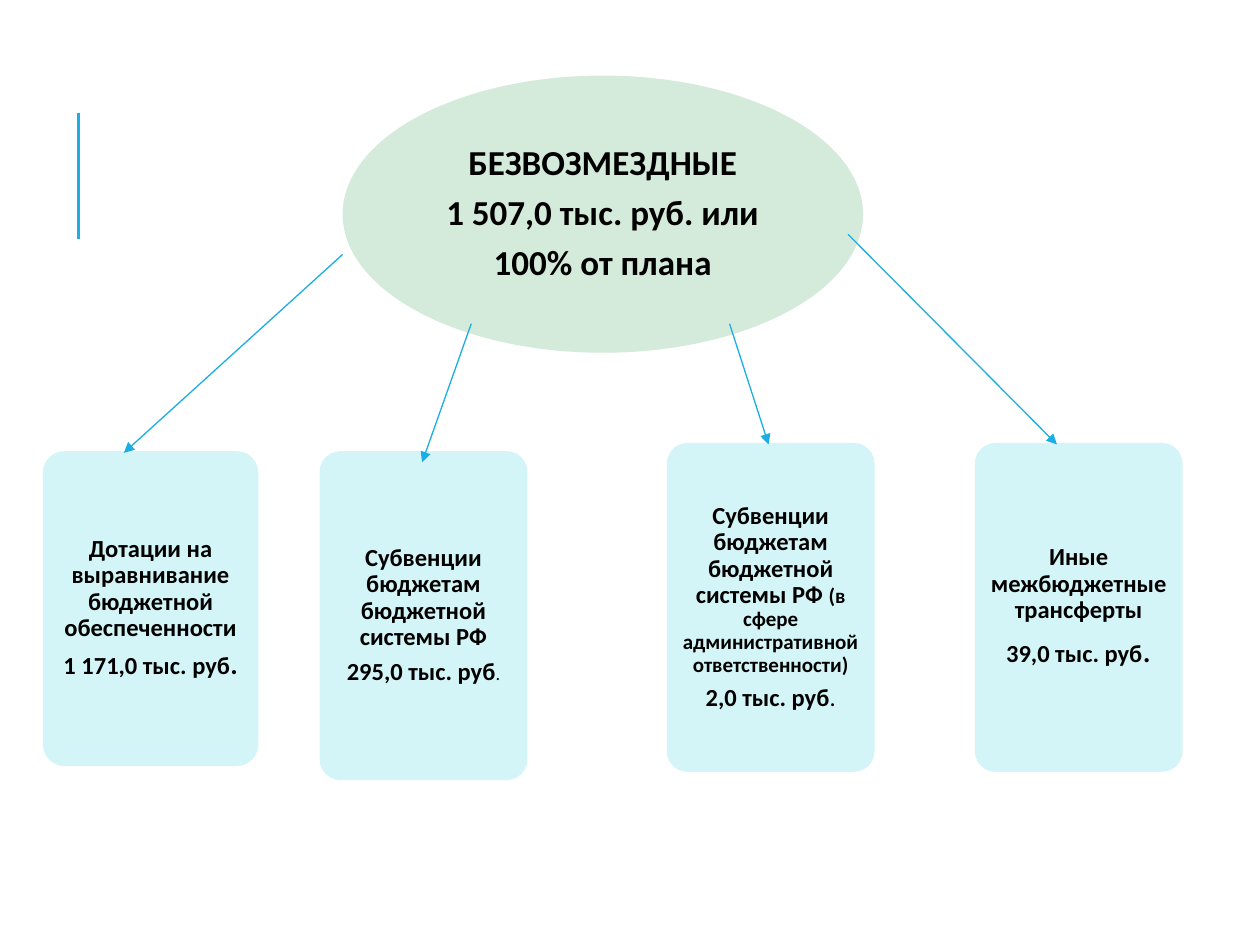
from typing import NamedTuple

from lxml import etree
from pptx import Presentation, util as u
from pptx.dml.color import RGBColor
from pptx.enum import shapes, text
from pptx.oxml.ns import qn

ACCENT, MINT, AQUA, BLACK = "1CADE4", "D4EBDB", "D4F5F7", "000000"
FONT = "Calibri"
BOX_WIDTH, BOX_HEIGHT = 118.8, 188


class Run(NamedTuple):
    text: str
    size: float = 14
    bold: bool = True


class Node(NamedTuple):
    kind: shapes.MSO_SHAPE
    left: float
    top: float
    width: float
    height: float
    fill: str
    inset: float
    paragraphs: list[list[Run]]


class Line(NamedTuple):
    start: tuple[float, float]
    end: tuple[float, float]
    width: float = 0.75
    arrow: bool = True


def color(value: str) -> RGBColor:
    return RGBColor.from_string(value)


def set_values(target, values: dict) -> None:
    for name, value in values.items():
        setattr(target, name, value)


def box(left: float, top: float, *paragraphs: list[Run],
        width: float = BOX_WIDTH, height: float = BOX_HEIGHT) -> Node:
    return Node(shapes.MSO_SHAPE.ROUNDED_RECTANGLE, left, top, width, height,
                AQUA, 4.3, list(paragraphs))


def draw_node(slide, node: Node) -> None:
    shape = slide.shapes.add_shape(
        node.kind, *(u.Pt(v) for v in (node.left, node.top, node.width, node.height)))
    shape.shadow.inherit = False
    shape.fill.solid()
    shape.fill.fore_color.rgb = color(node.fill)
    shape.line.fill.background()
    if node.kind == shapes.MSO_SHAPE.ROUNDED_RECTANGLE:
        shape.adjustments[0] = 0.1

    frame = shape.text_frame
    inset = u.Pt(node.inset)
    set_values(frame, {
        "word_wrap": True, "vertical_anchor": text.MSO_ANCHOR.MIDDLE,
        "margin_left": inset, "margin_right": inset,
        "margin_top": inset, "margin_bottom": inset})
    for index, runs in enumerate(node.paragraphs):
        paragraph = frame.paragraphs[0] if index == 0 else frame.add_paragraph()
        set_values(paragraph, {
            "alignment": text.PP_ALIGN.CENTER, "line_spacing": 0.9,
            "space_after": u.Pt(0.35 * runs[0].size)})
        for item in runs:
            run = paragraph.add_run()
            run.text = item.text
            set_values(run.font, {"name": FONT, "size": u.Pt(item.size), "bold": item.bold})
            run.font.color.rgb = color(BLACK)


def draw_line(slide, line: Line) -> None:
    connector = slide.shapes.add_connector(
        shapes.MSO_CONNECTOR.STRAIGHT, *(u.Pt(v) for v in line.start + line.end))
    connector.line.color.rgb = color(ACCENT)
    connector.line.width = u.Pt(line.width)
    properties = connector.element.spPr
    if line.arrow:
        etree.SubElement(properties.find(qn("a:ln")), qn("a:tailEnd"), type="triangle")
    etree.SubElement(properties, qn("a:effectLst"))


# Total amount and its four parts
NODES = [
    Node(shapes.MSO_SHAPE.OVAL, 195.8, 43.2, 297.4, 158.4, MINT, 5.8, [
        [Run("БЕЗВОЗМЕЗДНЫЕ", 20)],
        [Run("1 507,0 тыс. руб. или", 20)],
        [Run("100% от плана", 20)]]),
    box(24.5, 257.8,
        [Run("Дотации на выравнивание бюджетной обеспеченности")],
        [Run("1 171,0 тыс. руб"), Run(".", 16)],
        width=123.1, height=180),
    box(182.6, 257.8,
        [Run("Субвенции бюджетам бюджетной системы РФ")],
        [Run("295,0 тыс. руб"), Run(".", 10.5, False)]),
    box(381, 253.1,
        [Run("Субвенции бюджетам бюджетной системы РФ "),
         Run("(в сфере административной ответственности)", 12)],
        [Run("2,0 тыс. руб"), Run(".", 14, False)]),
    box(557, 253.1,
        [Run("Иные межбюджетные трансферты")],
        [Run("39,0 тыс. руб"), Run(".", 20, False)]),
]

# Side accent, then arrows from the total to its parts
LINES = [
    Line((44.8, 136.8), (44.8, 64.8), width=1.5, arrow=False),
    Line((484.6, 133.9), (604, 254)),
    Line((416.9, 185), (439.2, 254)),
    Line((269.3, 185), (241.2, 264.2)),
    Line((195.8, 145.4), (70.8, 258.8)),
]


def main() -> None:
    presentation = Presentation()
    set_values(presentation, {"slide_width": u.Pt(720), "slide_height": u.Pt(540)})
    slide = presentation.slides.add_slide(presentation.slide_layouts[6])
    for node in NODES:
        draw_node(slide, node)
    for line in LINES:
        draw_line(slide, line)
    presentation.save("out.pptx")


if __name__ == "__main__":
    main()
